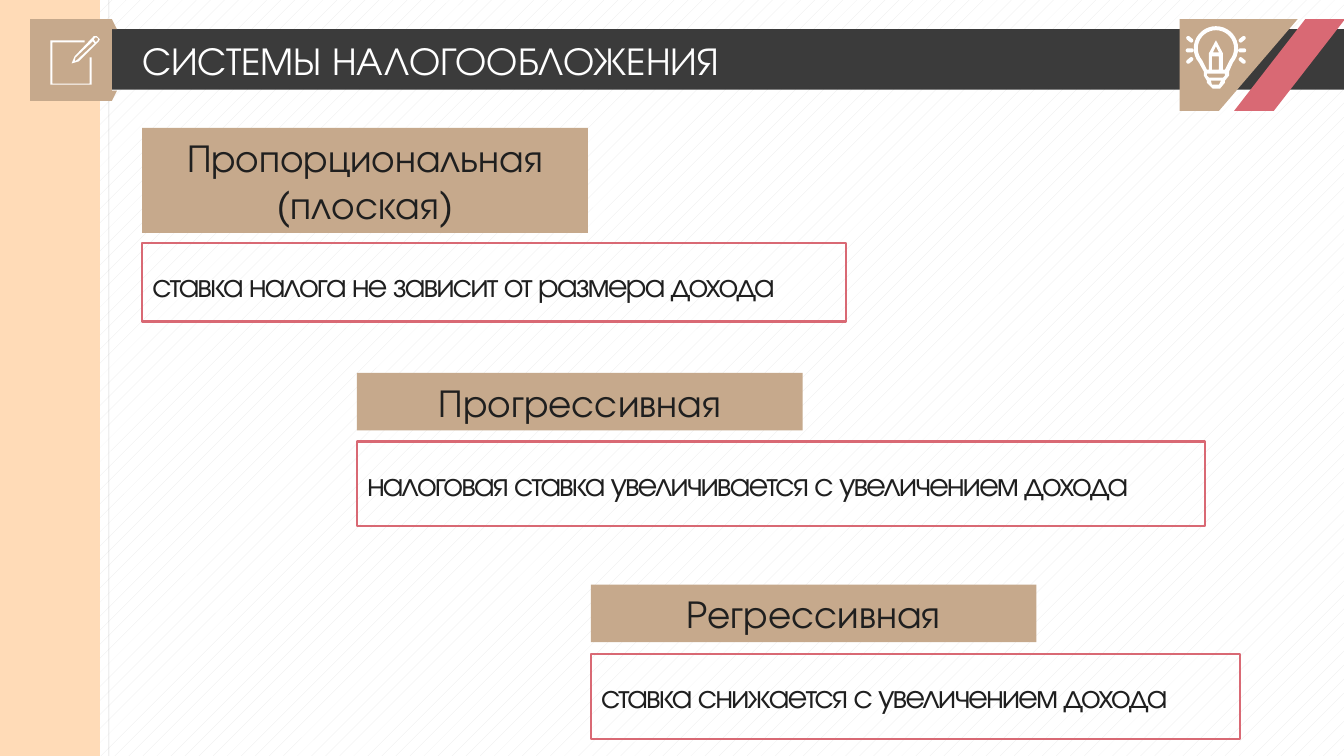
from math import cos, radians, sin

from lxml.etree import SubElement
from pptx import Presentation
from pptx.dml.color import RGBColor
from pptx.enum.dml import MSO_PATTERN
from pptx.enum.shapes import MSO_CONNECTOR, MSO_SHAPE
from pptx.enum.text import MSO_ANCHOR, MSO_AUTO_SIZE, PP_ALIGN
from pptx.oxml.ns import qn
from pptx.util import Inches, Pt

FONT = "TeX Gyre Adventor"
WHITE = RGBColor(0xFF, 0xFF, 0xFF)
INK = RGBColor(0x1F, 0x1F, 0x1F)
CHARCOAL = RGBColor(0x3B, 0x3B, 0x3B)
PEACH = RGBColor(0xFF, 0xDB, 0xB7)
TAN = RGBColor(0xC6, 0xA9, 0x8C)
ROSE = RGBColor(0xD9, 0x69, 0x74)
HATCH = RGBColor(0xE9, 0xE9, 0xE9)

prs = Presentation()
prs.slide_width, prs.slide_height = Inches(13.33), Inches(7.5)
slide = prs.slides.add_slide(prs.slide_layouts[5])
shapes = slide.shapes

backdrop = slide.background.fill
backdrop.patterned()
backdrop.pattern = MSO_PATTERN.PERCENT_5
backdrop.fore_color.rgb = HATCH
backdrop.back_color.rgb = WHITE


def add_block(preset, left, top, width, height, color=None):
    block = shapes.add_shape(preset, Inches(left), Inches(top), Inches(width), Inches(height))
    block.shadow.inherit = False
    block.line.fill.background()
    if color is None:
        block.fill.background()
    else:
        block.fill.solid()
        block.fill.fore_color.rgb = color
    return block


def add_outline(contours, color):
    """Fill closed contours as one shape; inner contours become holes."""
    builder = None
    for contour in contours:
        points = [(Inches(x), Inches(y)) for x, y in contour]
        if builder is None:
            builder = shapes.build_freeform(*points[0])
        else:
            builder.move_to(*points[0])
        builder.add_line_segments(points[1:], close=True)
    outline = builder.convert_to_shape()
    outline.shadow.inherit = False
    outline.fill.solid()
    outline.fill.fore_color.rgb = color
    outline.line.fill.background()


# Frame of the slide
margin_rule = shapes.add_connector(
    MSO_CONNECTOR.STRAIGHT, Inches(1.08), 0, Inches(1.08), Inches(7.5))
margin_rule.line.color.rgb = INK
margin_rule.line.width = Pt(0.5)
rule_properties = margin_rule._element.spPr
SubElement(rule_properties.find(".//" + qn("a:srgbClr")), qn("a:alpha"), val="20000")
SubElement(rule_properties, qn("a:effectLst"))

add_block(MSO_SHAPE.RECTANGLE, 0, 0.29, 13.33, 0.6, CHARCOAL)
add_block(MSO_SHAPE.RECTANGLE, 0, 0, 0.99, 7.5, PEACH)
add_block(MSO_SHAPE.RECTANGLE, 0.3, 0.19, 0.81, 0.81, TAN)
add_block(MSO_SHAPE.RIGHT_TRIANGLE, 1.11, 0.19, 0.05, 0.1, TAN)
lower_fold = add_block(MSO_SHAPE.RIGHT_TRIANGLE, 1.11, 0.9, 0.05, 0.1, TAN)
lower_fold._element.spPr.xfrm.set("flipV", "1")

add_outline([[(11.7, 0.19), (12.87, 0.19), (12.09, 1.1), (11.7, 1.1)]], TAN)
stripe = add_block(MSO_SHAPE.PARALLELOGRAM, 12.24, 0.19, 1.1, 0.91, ROSE)
stripe.adjustments[0] = 0.776

# Light bulb with a pencil inside
BULB_X, BULB_Y = 12.06, 0.48
outer_glass, inner_glass = (
    [(BULB_X + radius * cos(radians(angle)), BULB_Y - radius * sin(radians(angle)))
     for angle in range(220, -41, -10)]
    for radius in (0.22, 0.18))
add_outline([
    outer_glass + [(12.19, 0.71), (12.19, 0.75), (12.15, 0.8), (12.15, 0.82), (12.1, 0.88),
                   (12.03, 0.88), (11.97, 0.82), (11.97, 0.8), (11.94, 0.75), (11.94, 0.71)],
    inner_glass + [(12.15, 0.69), (12.13, 0.69), (12.13, 0.53), (12.06, 0.4),
                   (11.99, 0.53), (11.99, 0.69), (11.97, 0.69)],
    [(12.06, 0.46), (12.09, 0.52), (12.03, 0.52)],
    [(12.02, 0.56), (12.09, 0.56), (12.09, 0.69), (12.02, 0.69)],
    [(11.97, 0.73), (12.15, 0.73), (12.15, 0.75), (12.13, 0.77), (11.99, 0.77), (11.97, 0.75)],
    [(12.01, 0.8), (12.11, 0.8), (12.09, 0.84), (12.02, 0.84)],
], WHITE)
for side in (-1, 1):
    for ray_y, tilt in ((0.39, -40), (0.5, 0), (0.6, 40)):
        ray = add_block(MSO_SHAPE.ROUNDED_RECTANGLE, BULB_X + side * 0.26 - 0.04,
                        ray_y - 0.02, 0.08, 0.04, WHITE)
        ray.adjustments[0] = 0.5
        ray.rotation = side * tilt

# Notepad and pencil
add_outline([[(0.84, 0.4), (0.5, 0.4), (0.5, 0.84), (0.91, 0.84), (0.91, 0.57),
              (0.89, 0.57), (0.89, 0.83), (0.52, 0.83), (0.52, 0.42), (0.84, 0.42)]], WHITE)
add_outline([
    [(0.71, 0.63), (0.74, 0.56), (0.93, 0.36), (0.96, 0.36), (0.99, 0.39), (0.98, 0.41),
     (0.78, 0.61)],
    [(0.74, 0.61), (0.75, 0.57), (0.92, 0.41), (0.94, 0.43), (0.77, 0.59)],
    [(0.93, 0.39), (0.95, 0.37), (0.97, 0.38), (0.97, 0.4), (0.95, 0.42)],
], WHITE)

# Title, raised above the dark bar
title = shapes.title
shapes._spTree.append(title._element)
title.left, title.top = Inches(1.41), Inches(0.36)
title.width, title.height = Inches(10.54), Inches(0.47)
heading = title.text_frame
heading.text = "СИСТЕМЫ НАЛОГООБЛОЖЕНИЯ"
heading.margin_left = heading.margin_right = heading.margin_top = heading.margin_bottom = 0
heading.vertical_anchor = MSO_ANCHOR.MIDDLE
heading.auto_size = MSO_AUTO_SIZE.SHAPE_TO_FIT_TEXT
heading.paragraphs[0].alignment = PP_ALIGN.LEFT
heading_font = heading.paragraphs[0].runs[0].font
heading_font.name, heading_font.size = FONT, Pt(28)
heading_font.color.rgb = WHITE

# Tax systems: left, name, name top and height, rule, rule top, width and height
tax_systems = [
    (1.41, "Пропорциональная\n(плоская)", 1.27, 1.04,
     "ставка налога не зависит от размера дохода", 2.41, 6.98, 0.78),
    (3.54, "Прогрессивная", 3.7, 0.57,
     "налоговая ставка увеличивается с увеличением дохода", 4.38, 8.41, 0.84),
    (5.86, "Регрессивная", 5.8, 0.57,
     "ставка снижается с увеличением дохода", 6.49, 6.44, 0.84),
]
for left, name, name_top, name_height, rate_rule, rule_top, rule_width, rule_height in tax_systems:
    name_box = add_block(MSO_SHAPE.RECTANGLE, left, name_top, 4.42, name_height, TAN)
    name_box.text_frame.text = name
    name_box.text_frame.auto_size = MSO_AUTO_SIZE.SHAPE_TO_FIT_TEXT

    rule_box = add_block(MSO_SHAPE.RECTANGLE, left, rule_top, rule_width, rule_height)
    rule_box.line.color.rgb = ROSE
    rule_box.line.width = Pt(1.5)
    rule_frame = rule_box.text_frame
    rule_frame.text = rate_rule
    rule_frame.margin_left = rule_frame.margin_right = rule_frame.margin_bottom = 0
    rule_frame.margin_top = Inches(0.21)
    rule_frame.paragraphs[0]._p.get_or_add_pPr().set("marL", str(Inches(0.1)))

    for box, size, alignment in ((name_box, 28, PP_ALIGN.CENTER), (rule_box, 24, PP_ALIGN.LEFT)):
        box.text_frame.word_wrap = True
        box.text_frame.vertical_anchor = MSO_ANCHOR.TOP
        for paragraph in box.text_frame.paragraphs:
            paragraph.alignment = alignment
            font = paragraph.runs[0].font
            font.name, font.size = FONT, Pt(size)
            font.color.rgb = INK
    rule_frame.paragraphs[0].runs[0]._r.get_or_add_rPr().set("spc", "-150")

prs.save("out.pptx")
